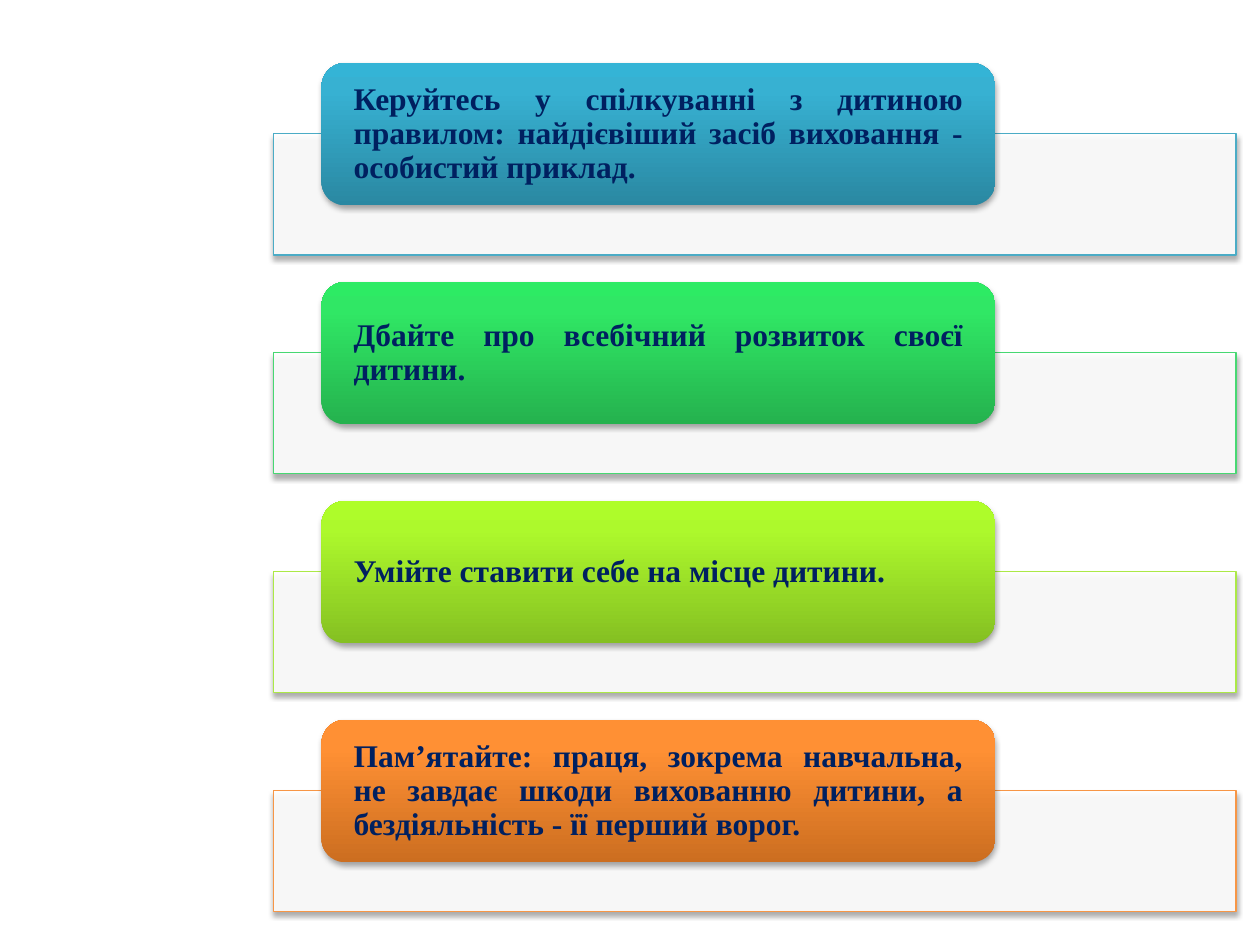
import copy
from dataclasses import dataclass

import pptx
import pptx.dml.color
import pptx.enum.shapes
import pptx.enum.text
import pptx.oxml
import pptx.oxml.ns
import pptx.util

SHAPE = pptx.enum.shapes.MSO_SHAPE
INCH = pptx.util.Inches
qn = pptx.oxml.ns.qn


@dataclass(frozen=True)
class Theme:
    font: str = "Times New Roman"
    size: float = 18
    text: str = "002060"
    panel: str = "FFFFFF"
    panel_opacity: int = 90
    line_width: float = 0.75
    shadow: str = "000000"


THEME = Theme()
STOPS = (0, 0.8, 1)

# Text, panel outline, gradient from bottom to top
TIPS = [
    ("Керуйтесь у спілкуванні з дитиною правилом: найдієвіший засіб виховання - особистий приклад.",
     "4BACC6", ("2A88A2", "37B1D2", "34B4D6")),
    ("Дбайте про всебічний розвиток своєї дитини.",
     "47D872", ("25B24E", "30E765", "2DEB64")),
    ("Умійте ставити себе на місце дитини.",
     "ACE946", ("85C022", "ADF92C", "AFFE28")),
    ("Пам’ятайте: праця, зокрема навчальна, не завдає шкоди вихованню дитини, "
     "а бездіяльність - її перший ворог.",
     "F79646", ("CC6E20", "FF9034", "FF9136")),
]


def rgb(value):
    return pptx.dml.color.RGBColor.from_string(value)


def add_shadow(s):
    s.shadow.inherit = False
    effects = s._element.spPr.find(qn("a:effectLst"))
    effects.append(pptx.oxml.parse_xml(
        f'<a:outerShdw {pptx.oxml.ns.nsdecls("a")} blurRad="39370" dist="22860" '
        f'dir="5400000" rotWithShape="0"><a:srgbClr val="{THEME.shadow}">'
        '<a:alpha val="35000"/></a:srgbClr></a:outerShdw>'))


def fill_gradient(s, colors):
    s.fill.gradient()
    s.fill.gradient_angle = 90
    stop_list = next(s._element.spPr.iter(qn("a:gsLst")))
    stop_list.append(copy.deepcopy(stop_list[-1]))
    for stop, position, color in zip(s.fill.gradient_stops, STOPS, colors):
        stop.position = position
        stop.color.rgb = rgb(color)


def write_text(s, text, *, size=THEME.size, color=THEME.text, bold=True,
               align=pptx.enum.text.PP_ALIGN.JUSTIFY, spacing=0.9, side=0.2):
    tf = s.text_frame
    tf.word_wrap = True
    tf.vertical_anchor = pptx.enum.text.MSO_ANCHOR.MIDDLE
    tf.margin_left = tf.margin_right = INCH(side)
    tf.margin_top = tf.margin_bottom = 0
    p = tf.paragraphs[0]
    p.alignment = align
    p.line_spacing = spacing
    r = p.add_run()
    r.text = text
    r.font.name = THEME.font
    r.font.size = pptx.util.Pt(size)
    r.font.bold = bold
    r.font.color.rgb = rgb(color)


def add_panel(slide, box, outline):
    s = slide.shapes.add_shape(SHAPE.RECTANGLE, *box)
    s.fill.solid()
    s.fill.fore_color.rgb = rgb(THEME.panel)
    color = next(s._element.spPr.iter(qn("a:srgbClr")))
    alpha = color.makeelement(qn("a:alpha"), {"val": str(THEME.panel_opacity * 1000)})
    color.append(alpha)
    s.line.color.rgb = rgb(outline)
    s.line.width = pptx.util.Pt(THEME.line_width)
    add_shadow(s)


def add_label(slide, box, text, colors):
    s = slide.shapes.add_shape(SHAPE.ROUNDED_RECTANGLE, *box)
    fill_gradient(s, colors)
    s.line.fill.background()
    add_shadow(s)
    write_text(s, text)


def add_tip(slide, box, text, outline, colors):
    """A label overlapping the top edge of a wide panel."""
    x, y, w, h = box
    add_panel(slide, (x, int(y + h / 3), w, int(h * 0.57)), outline)
    add_label(slide, (int(x + w / 20), y, int(w * 0.7), int(h * 0.67)), text, colors)


def add_tip_list(slide, box, tips):
    x, y, w, h = box
    gap_share = 0.03
    row_h = h / (len(tips) + gap_share * (len(tips) - 1))
    for i, (text, outline, colors) in enumerate(tips):
        top = y + i * row_h * (1 + gap_share)
        add_tip(slide, (x, int(top), w, int(row_h)), text, outline, colors)


def main():
    prs = pptx.Presentation()
    prs.slide_width, prs.slide_height = INCH(10), INCH(7.5)
    slide = prs.slides.add_slide(prs.slide_layouts[6])
    add_tip_list(slide, (INCH(2.17), INCH(0.5), INCH(7.64), INCH(6.9)), TIPS)
    prs.save("out.pptx")


if __name__ == "__main__":
    main()
